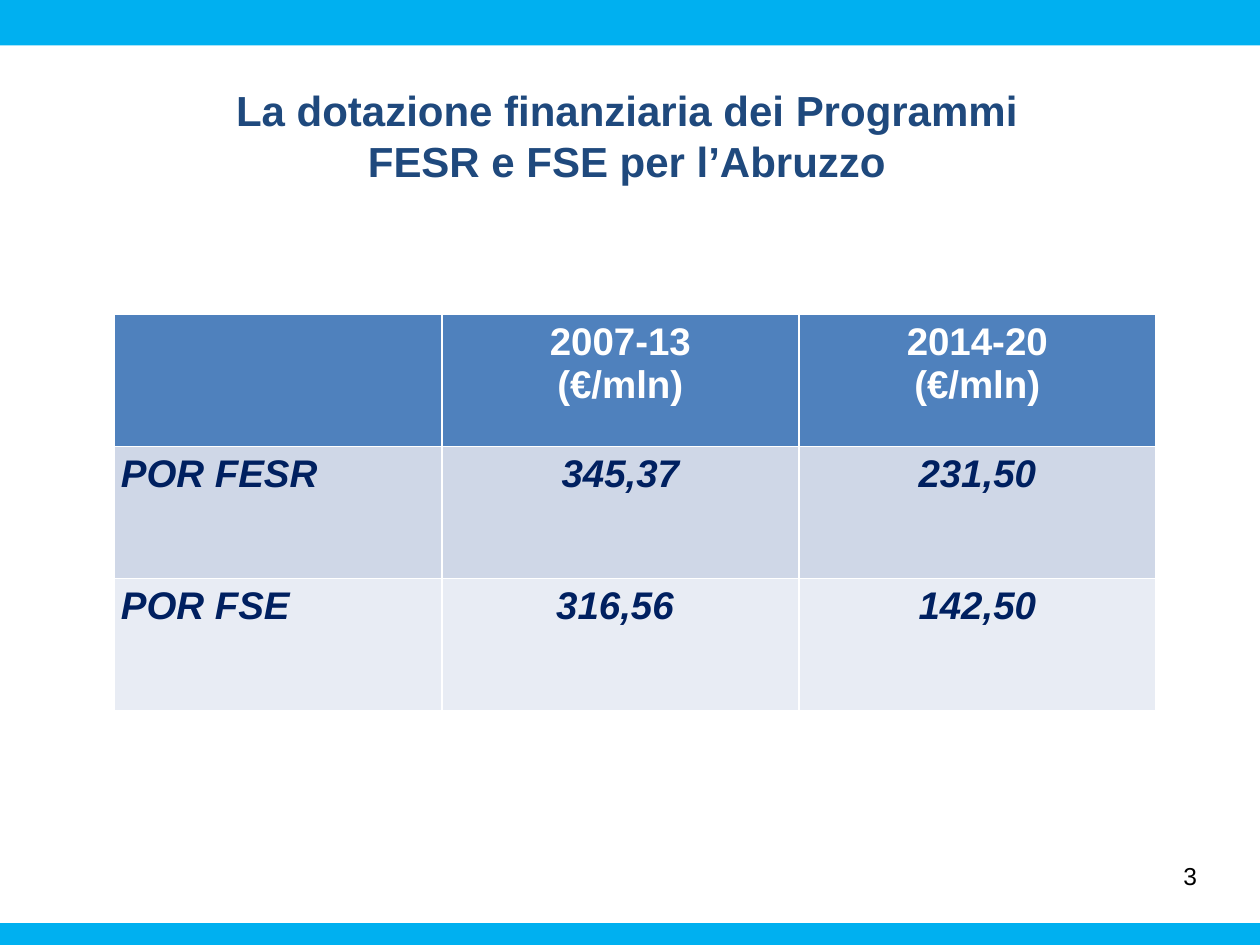
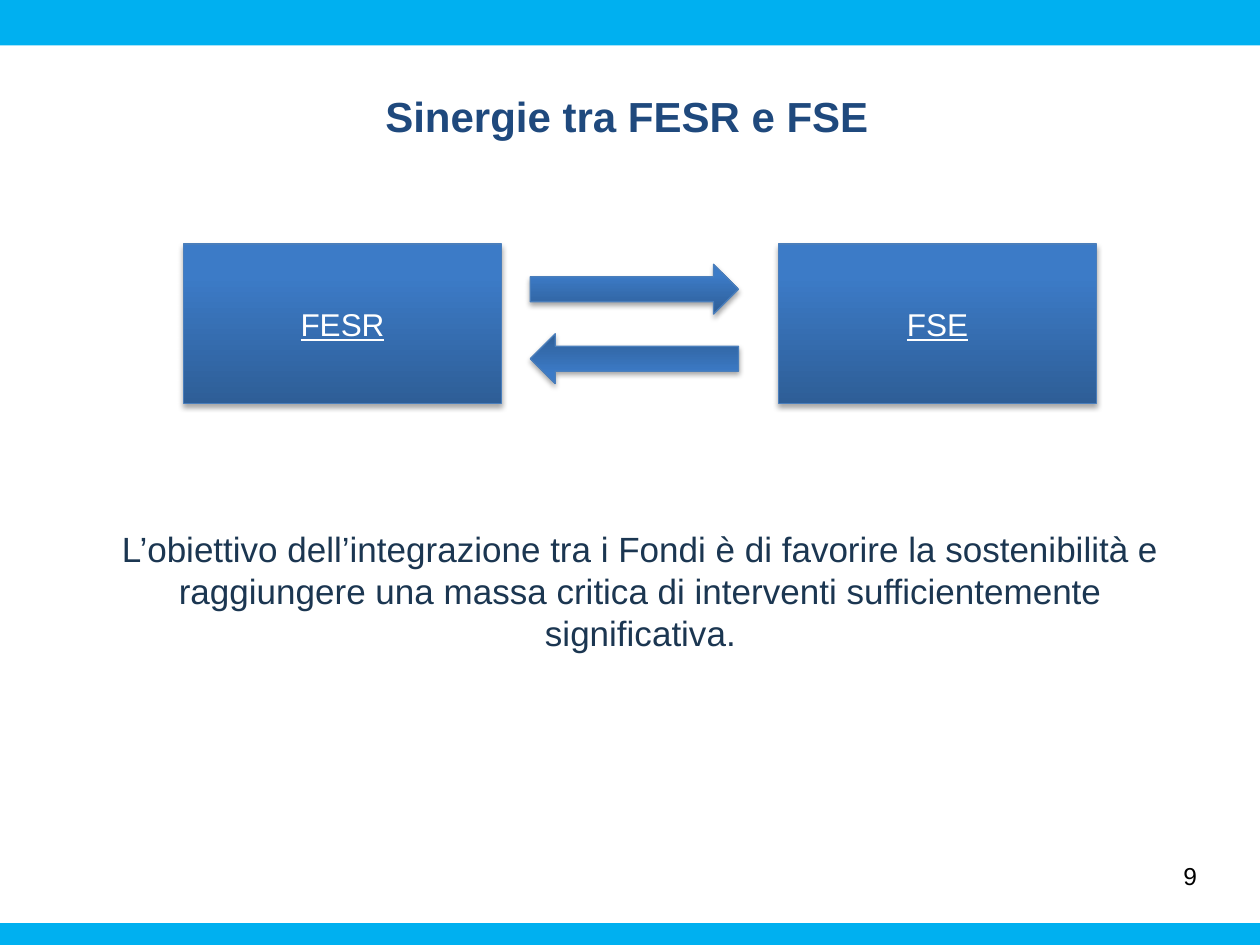
import pptx
import pptx.util
import pptx.dml.color
import pptx.enum.shapes
import pptx.enum.text
import pptx.oxml
import pptx.oxml.ns

Pt = pptx.util.Pt
ALIGN = pptx.enum.text.PP_ALIGN
ANCHOR = pptx.enum.text.MSO_ANCHOR
SHAPE = pptx.enum.shapes.MSO_SHAPE

COLOURS = {
    "band": "00B0F0", "title": "1F497D", "number": "000000", "white": "FFFFFF",
    "header": "4F81BD", "odd_row": "CFD7E7", "even_row": "E8ECF4", "cell": "002060",
    "outline": "4A7EBB", "body": "1B3651",
}
GRADIENT = [(0, "2E5E97"), (80, "3C7BC7"), (100, "3A7CCA")]
FONT = "Arial"
WIDTH, HEIGHT = 720, 540
BANDS = [(0, 26), (527.5, 12.5)]

BUDGET = {
    "title": ["La dotazione finanziaria dei Programmi", "FESR e FSE per l’Abruzzo"],
    "number": "3",
    "rows": [
        [[], ["2007-13", "(€/mln)"], ["2014-20", "(€/mln)"]],
        [["POR FESR"], ["345,37"], ["231,50"]],
        [["POR FSE"], ["316,56 "], ["142,50"]],
    ],
}
SYNERGY = {
    "title": ["Sinergie tra FESR e FSE"],
    "number": "9",
    "funds": ["FESR", "FSE"],
    "goal": "L’obiettivo dell’integrazione tra i Fondi è di favorire la sostenibilità e "
            "raggiungere una massa critica di interventi sufficientemente significativa.",
}


def colour(name):
    return pptx.dml.color.RGBColor.from_string(COLOURS[name])


def place(left, top, width, height):
    return Pt(left), Pt(top), Pt(width), Pt(height)


def write(frame, lines, size, ink, align=ALIGN.CENTER, anchor=ANCHOR.TOP, inset=0,
          bold=False, italic=False, underline=False):
    frame.word_wrap = True
    frame.auto_size = pptx.enum.text.MSO_AUTO_SIZE.NONE
    frame.vertical_anchor = anchor
    frame.margin_left = frame.margin_right = Pt(inset)
    frame.margin_top = frame.margin_bottom = Pt(inset)
    fill_lines(frame, lines, size, ink, align, bold, italic, underline)


def fill_lines(frame, lines, size, ink, align, bold=False, italic=False, underline=False):
    for index, line in enumerate(lines):
        paragraph = frame.paragraphs[0] if index == 0 else frame.add_paragraph()
        paragraph.alignment = align
        run = paragraph.add_run()
        run.text = line
        run.font.name = FONT
        run.font.size = Pt(size)
        run.font.color.rgb = colour(ink)
        run.font.bold = bold
        run.font.italic = italic
        run.font.underline = underline


def add_text(slide, lines, box, **text_format):
    write(slide.shapes.add_textbox(*place(*box)).text_frame, lines, **text_format)


def add_base(presentation, content, title_top, title_height):
    slide = presentation.slides.add_slide(presentation.slide_layouts[5])
    title = slide.shapes.title
    title.left, title.top, title.width, title.height = place(37.5, title_top, 641.5, title_height)
    write(title.text_frame, content["title"], size=24, ink="title", anchor=ANCHOR.MIDDLE, bold=True)
    add_text(slide, [content["number"]], (516, 492, 168, 37), size=14, ink="number", align=ALIGN.RIGHT)
    for top, height in BANDS:
        band = slide.shapes.add_shape(SHAPE.RECTANGLE, *place(0, top, WIDTH, height))
        band.shadow.inherit = False
        band.fill.solid()
        band.fill.fore_color.rgb = colour("band")
        band.line.fill.background()
    return slide


def add_raised(slide, kind, box):
    shape = slide.shapes.add_shape(kind, *place(*box))
    shape.line.color.rgb = colour("outline")
    shape.line.width = Pt(0.75)
    shape.fill.gradient()
    shape.fill.gradient_angle = 90
    namespace = pptx.oxml.ns.nsdecls("a")
    properties = shape._element.spPr
    stops = properties.find(".//" + pptx.oxml.ns.qn("a:gsLst"))
    for stop in list(stops):
        stops.remove(stop)
    for position, shade in GRADIENT:
        stops.append(pptx.oxml.parse_xml(
            f'<a:gs {namespace} pos="{position * 1000}"><a:srgbClr val="{shade}"/></a:gs>'))
    shape.shadow.inherit = False
    properties.find(pptx.oxml.ns.qn("a:effectLst")).append(pptx.oxml.parse_xml(
        f'<a:outerShdw {namespace} blurRad="{Pt(3)}" dist="{Pt(1.8)}" dir="5400000" rotWithShape="0">'
        '<a:srgbClr val="000000"><a:alpha val="35000"/></a:srgbClr></a:outerShdw>'))
    return shape


def build_budget(presentation):
    slide = add_base(presentation, BUDGET, 46, 62.5)
    rows, widths, row_height = BUDGET["rows"], [187, 204, 204], 75.6
    table = slide.shapes.add_table(
        len(rows), len(widths), *place(65.5, 179.5, sum(widths), row_height * len(rows))).table
    for column, width in zip(table.columns, widths):
        column.width = Pt(width)
    fills = ["header", "odd_row", "even_row"]
    for row_index, row in enumerate(rows):
        table.rows[row_index].height = Pt(row_height)
        for column_index, lines in enumerate(row):
            cell = table.cell(row_index, column_index)
            cell.fill.solid()
            cell.fill.fore_color.rgb = colour(fills[row_index])
            cell.margin_left = cell.margin_right = Pt(3.6)
            cell.margin_top = cell.margin_bottom = Pt(3.6)
            is_header = row_index == 0
            fill_lines(cell.text_frame, lines, size=22, ink="white" if is_header else "cell",
                       align=ALIGN.CENTER if is_header or column_index else ALIGN.LEFT,
                       bold=True, italic=not is_header)


def build_synergy(presentation):
    slide = add_base(presentation, SYNERGY, 49, 34.5)
    for index, rotation in enumerate([0, 180]):
        arrow = add_raised(slide, SHAPE.RIGHT_ARROW, (303, 151 + 39.7 * index, 119, 28.5))
        arrow.rotation = rotation
    for index, fund in enumerate(SYNERGY["funds"]):
        box = add_raised(slide, SHAPE.RECTANGLE, (105 + 340 * index, 139.5, 181.5, 91))
        write(box.text_frame, [fund], size=18, ink="white", anchor=ANCHOR.MIDDLE, underline=True)
    add_text(slide, [SYNERGY["goal"]], (65.5, 298, 601, 76), size=20, ink="body", inset=3.6)


def main():
    presentation = pptx.Presentation()
    presentation.slide_width, presentation.slide_height = Pt(WIDTH), Pt(HEIGHT)
    build_budget(presentation)
    build_synergy(presentation)
    presentation.save("out.pptx")


if __name__ == "__main__":
    main()
